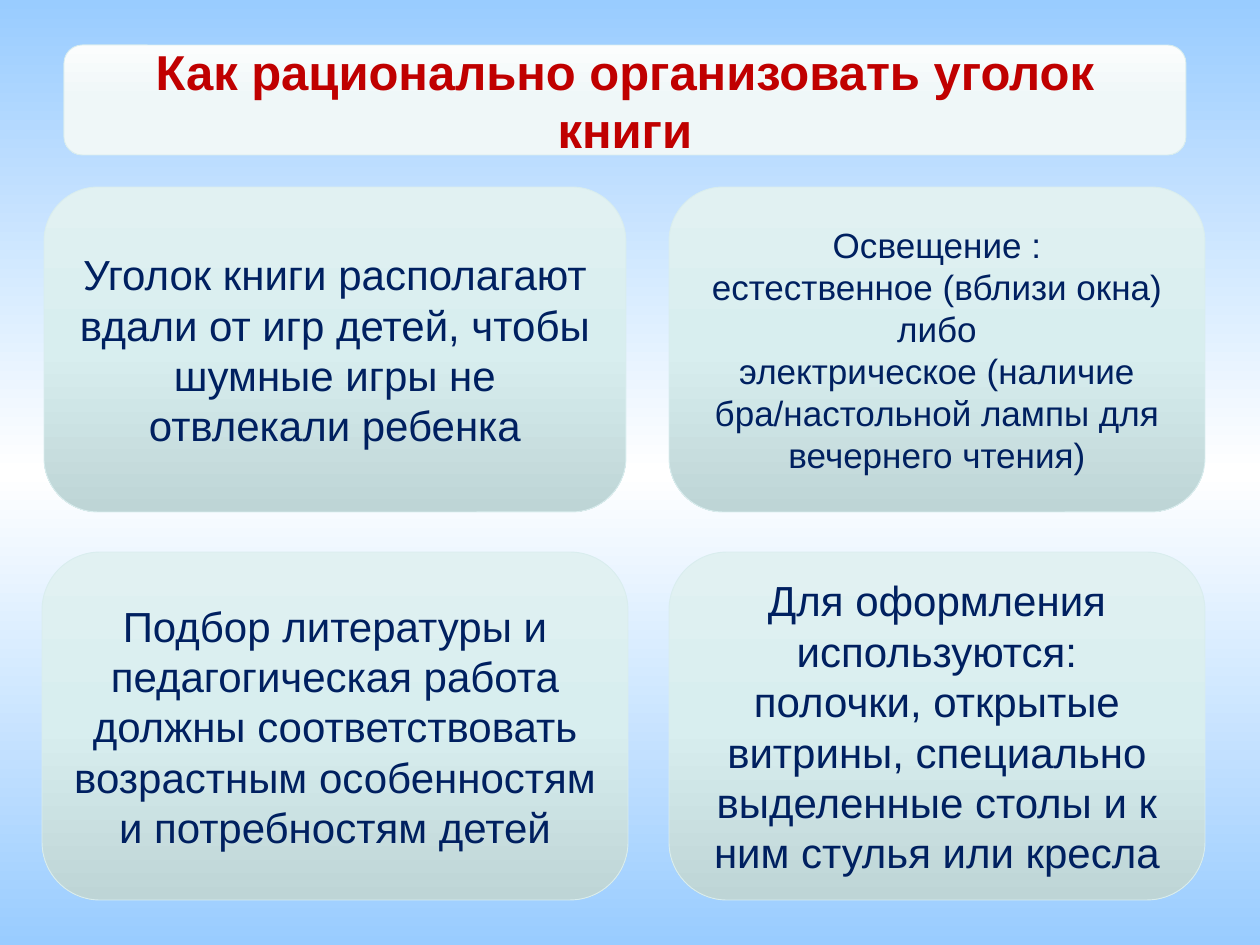
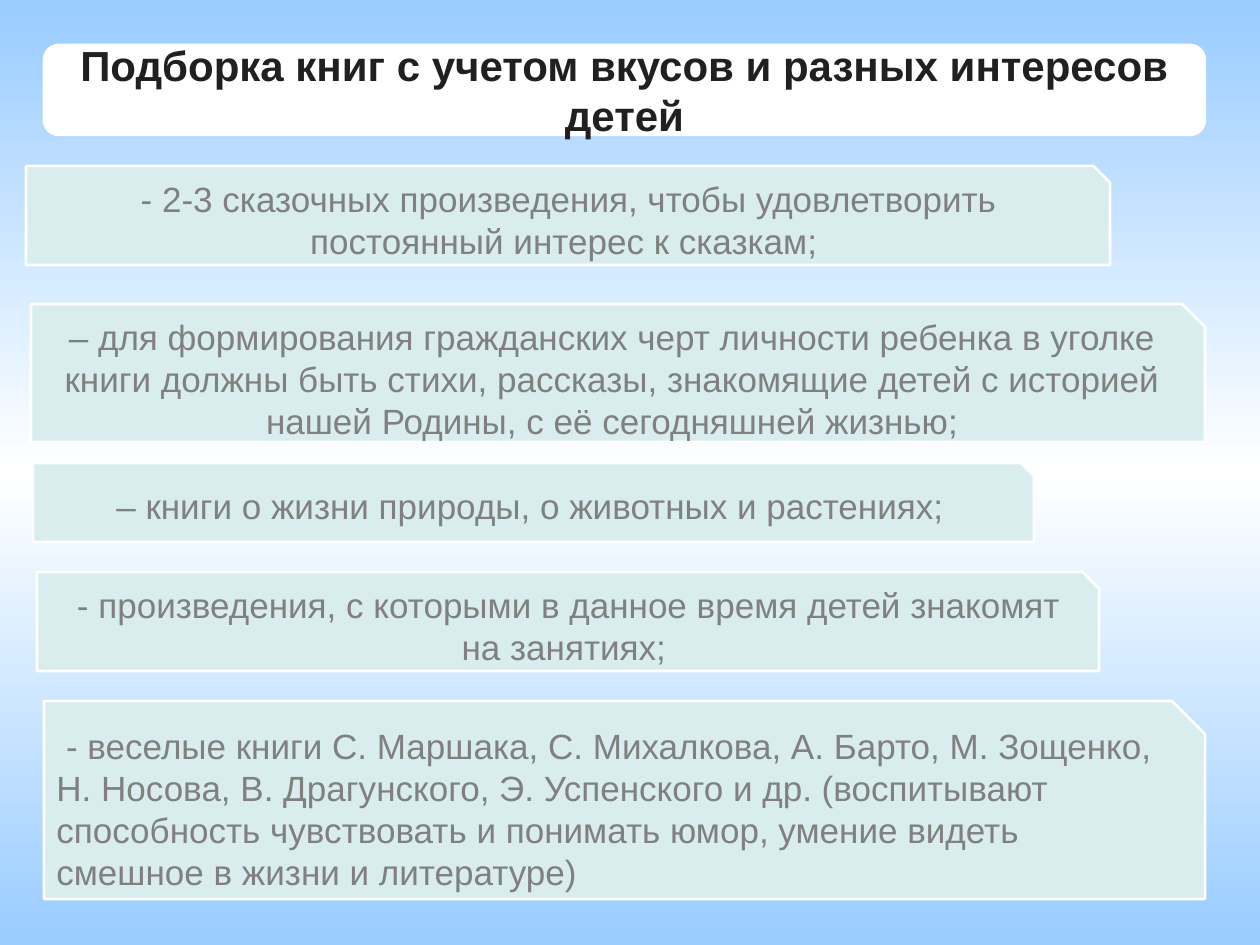
"""Builds two slides about arranging a children's book corner."""
import copy
import pptx
import pptx.dml.color
import pptx.enum.shapes
import pptx.enum.text
import pptx.oxml.ns
import pptx.util

SHAPE = pptx.enum.shapes.MSO_SHAPE
ALIGN = pptx.enum.text.PP_ALIGN

PX = 914400 / 126
FONT = "Arial"
SKY = ("99CCFF", "FFFFFF", "99CCFF")
TITLE_FILL = ("FBFDFD", "EFF7F8", "EDF7F7")
CARD_FILL = ("E1F1F2", "D8EEEF", "BED5D6")
MINT, WHITE = "D9EDEE", "FFFFFF"
RED, NAVY, BLACK, GREY = "C00000", "002060", "202020", "808080"

CORNER_TITLE = "Как рационально организовать уголок книги"
CARD_ROWS = [(187, 325), (552, 348)]
CARD_COLUMNS = [[(44, 582), (42, 586)], [(669, 536), (669, 536)]]
CARDS = [
    [(["Уголок книги располагают вдали от игр детей, чтобы шумные игры не отвлекали ребенка"], 24),
     (["Подбор литературы и педагогическая работа должны соответствовать возрастным "
       "особенностям и потребностям детей"], 24)],
    [(["Освещение :",
       "естественное (вблизи окна) либо",
       "электрическое (наличие бра/настольной лампы для вечернего чтения)"], 20),
     (["Для оформления используются:",
       "полочки, открытые витрины, специально выделенные столы и к ним стулья или кресла"], 24)],
]

BOOKS_TITLE = "Подборка книг с учетом вкусов и разных интересов детей"
BOOKS = [
    ((26, 166, 1084, 99), ALIGN.CENTER,
     " - 2-3 сказочных произведения, чтобы удовлетворить постоянный интерес к сказкам;"),
    ((31, 304, 1174, 138), ALIGN.CENTER,
     "– для формирования гражданских черт личности ребенка в уголке книги должны быть стихи, "
     "рассказы, знакомящие детей с историей нашей Родины, с её сегодняшней жизнью;"),
    ((33, 463, 1001, 79), ALIGN.CENTER, "– книги о жизни природы, о животных и растениях;"),
    ((37, 572, 1062, 99), ALIGN.CENTER,
     " - произведения, с которыми в данное время детей знакомят на занятиях;"),
    ((44, 701, 1161, 198), ALIGN.LEFT,
     " - веселые книги С. Маршака, С. Михалкова, А. Барто, М. Зощенко, Н. Носова, "
     "В. Драгунского, Э. Успенского и др. (воспитывают способность чувствовать и понимать "
     "юмор, умение видеть смешное в жизни и литературе)"),
]


def px(n):
    return pptx.util.Emu(round(n * PX))


def rgb(color):
    return pptx.dml.color.RGBColor.from_string(color)


def paint(fill, element, colors):
    if isinstance(colors, str):
        fill.solid()
        fill.fore_color.rgb = rgb(colors)
        return
    fill.gradient()
    fill.gradient_angle = 270
    stops = next(element.iter(pptx.oxml.ns.qn("a:gsLst")))
    stops.insert(1, copy.deepcopy(stops[0]))
    for i, (stop, color) in enumerate(zip(fill.gradient_stops, colors)):
        stop.position = i / (len(colors) - 1)
        stop.color.rgb = rgb(color)


def write(tf, lines, size=20, color=GREY, bold=False, align=ALIGN.CENTER):
    tf.word_wrap = True
    tf.vertical_anchor = pptx.enum.text.MSO_ANCHOR.MIDDLE
    for i, line in enumerate(lines):
        p = tf.add_paragraph() if i else tf.paragraphs[0]
        p.alignment = align
        r = p.add_run()
        r.text = line
        r.font.name = FONT
        r.font.size = pptx.util.Pt(size)
        r.font.bold = bold
        r.font.color.rgb = rgb(color)


def add_box(s, kind, box, fill, line, width, lines, **style):
    sp = s.shapes.add_shape(kind, *map(px, box))
    sp.shadow.inherit = False
    paint(sp.fill, sp.element, fill)
    sp.line.color.rgb = rgb(line)
    sp.line.width = pptx.util.Pt(width)
    write(sp.text_frame, lines, **style)


def add_slide(prs):
    s = prs.slides.add_slide(prs.slide_layouts[6])
    paint(s.background.fill, s.element, SKY)
    return s


def corner_slide(prs):
    s = add_slide(prs)
    add_box(s, SHAPE.ROUNDED_RECTANGLE, (64, 45, 1122, 110), TITLE_FILL, MINT, 0.5,
            [CORNER_TITLE], size=28, color=RED, bold=True)
    for spans, cards in zip(CARD_COLUMNS, CARDS):
        for (left, width), (top, height), (lines, size) in zip(spans, CARD_ROWS, cards):
            add_box(s, SHAPE.ROUNDED_RECTANGLE, (left, top, width, height), CARD_FILL,
                    MINT, 0.5, lines, size=size, color=NAVY)


def books_slide(prs):
    s = add_slide(prs)
    add_box(s, SHAPE.ROUNDED_RECTANGLE, (44, 45, 1161, 90), WHITE, WHITE, 1.5,
            [BOOKS_TITLE], size=24, color=BLACK, bold=True)
    for box, align, text in BOOKS:
        add_box(s, SHAPE.SNIP_1_RECTANGLE, box, MINT, WHITE, 1.5, [text], align=align)


def main():
    prs = pptx.Presentation()
    prs.slide_width, prs.slide_height = px(1260), px(945)
    corner_slide(prs)
    books_slide(prs)
    prs.save("out.pptx")


if __name__ == "__main__":
    main()
